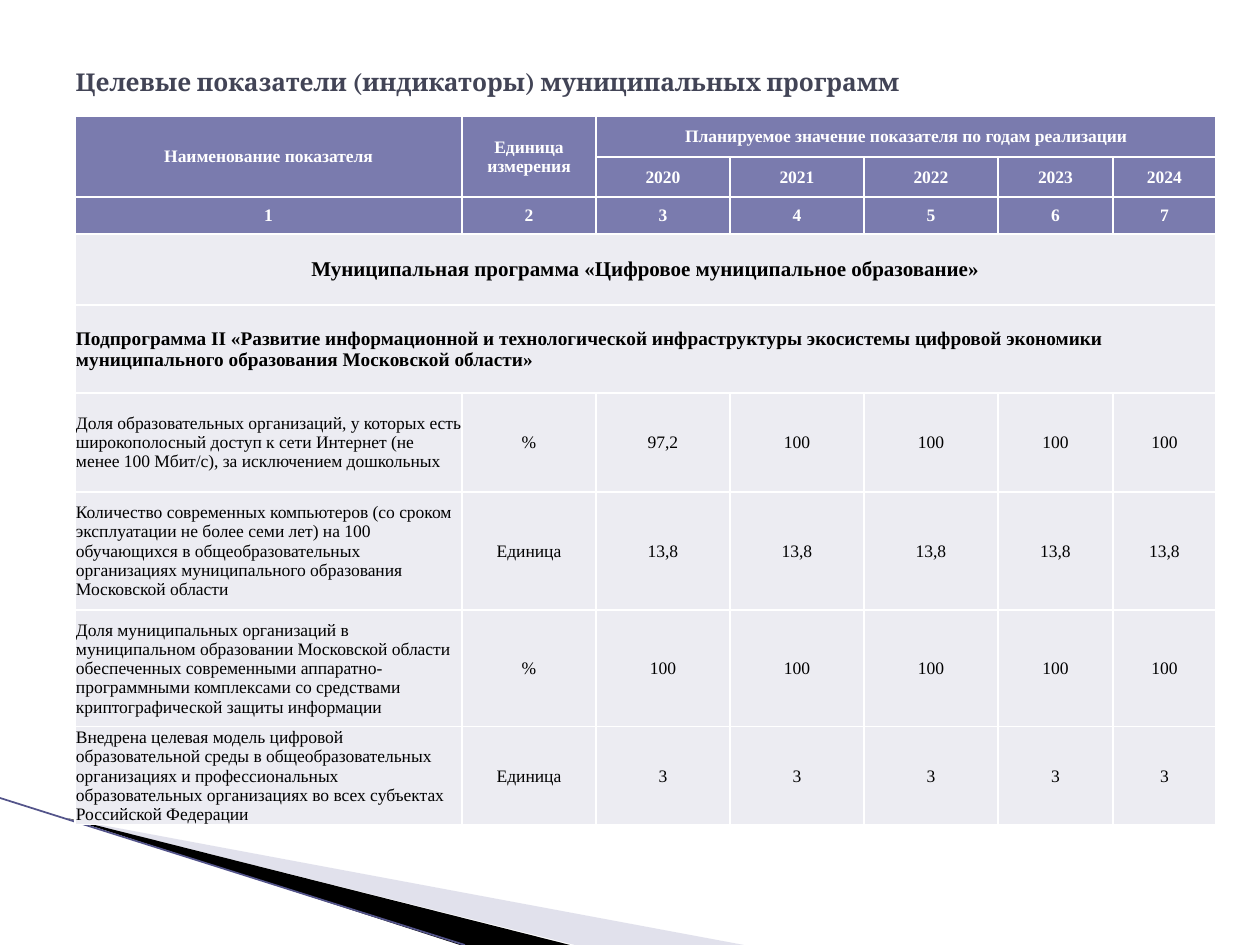
from dataclasses import dataclass
from lxml.etree import SubElement
from pptx import Presentation
from pptx.dml.color import RGBColor
from pptx.enum.shapes import MSO_CONNECTOR
from pptx.enum.text import MSO_ANCHOR, MSO_AUTO_SIZE, PP_ALIGN
from pptx.oxml.ns import qn
from pptx.util import Pt


@dataclass(frozen=True)
class Theme:
    head: str = "7A7BAE"
    body: str = "ECECF2"
    title: str = "424456"
    white: str = "FFFFFF"
    black: str = "000000"
    wedge: str = "B6B6D1"
    line: str = "53548A"
    serif: str = "Times New Roman"
    display: str = "Cambria"
    big: int = 14
    group: int = 12
    sub: int = 11
    text: int = 10


theme = Theme()

TITLE = "Целевые показатели (индикаторы) муниципальных программ"
HEAD = [
    ["Наименование показателя", "Единица измерения",
     "Планируемое значение показателя по годам реализации"],
    ["", "", "2020", "2021", "2022", "2023", "2024"],
    ["1", "2", "3", "4", "5", "6", "7"],
]
GROUPS = [
    ["Муниципальная программа «Цифровое муниципальное образование»"],
    ["Подпрограмма II «Развитие информационной и технологической инфраструктуры "
     "экосистемы цифровой экономики муниципального образования Московской области»"],
]
GOALS = [
    ["Доля образовательных организаций, у которых есть широкополосный доступ к сети "
     "Интернет (не менее 100 Мбит/с), за исключением дошкольных",
     "%", "97,2", "100", "100", "100", "100"],
    ["Количество современных компьютеров (со сроком эксплуатации не более семи лет) "
     "на 100 обучающихся в общеобразовательных организациях муниципального "
     "образования Московской области", "Единица"] + ["13,8"] * 5,
    ["Доля муниципальных организаций в муниципальном образовании Московской области "
     "обеспеченных современными аппаратно-программными комплексами со средствами "
     "криптографической защиты информации", "%"] + ["100"] * 5,
    ["Внедрена целевая модель цифровой образовательной среды в общеобразовательных "
     "организациях и профессиональных образовательных организациях во всех субъектах "
     "Российской Федерации", "Единица"] + ["3"] * 5,
]
ROWS = HEAD + GROUPS + GOALS
WIDTHS = [387, 134, 134, 134, 134, 115, 103]
HEIGHTS = [41, 40, 37, 71, 88, 99, 118, 117, 98]
SPANS = [(0, 0, 1, 0), (0, 1, 1, 1), (0, 2, 0, 6), (3, 0, 3, 6), (4, 0, 4, 6)]
WEDGES = [
    ([(69, 819), (744, 945), (575, 945)], theme.wedge, 40),
    ([(67, 818), (570, 945), (460, 945)], theme.black, 100),
]
SCALE = 914400 / 126


def px(n):
    return round(n * SCALE)


def write(frame, text, size, color, bold, align, face):
    para = frame.paragraphs[0]
    para.alignment = align
    run = para.add_run()
    run.text = text
    font = run.font
    font.name, font.size, font.bold = face, Pt(size), bold
    font.color.rgb = RGBColor.from_string(color)


def add_wedge(slide, points, color, alpha):
    path = slide.shapes.build_freeform(*points[0], scale=SCALE)
    path.add_line_segments(points[1:], close=True)
    shape = path.convert_to_shape()
    shape.shadow.inherit = False
    shape.line.fill.background()
    shape.fill.solid()
    shape.fill.fore_color.rgb = RGBColor.from_string(color)
    if alpha < 100:
        tint = shape.fill._xPr.find(qn("a:solidFill"))[0]
        SubElement(tint, qn("a:alpha"), val=str(alpha * 1000))


def add_edges(cell):
    props = cell._tc.get_or_add_tcPr()
    for side in ("lnL", "lnR", "lnT", "lnB"):
        edge = SubElement(props, qn(f"a:{side}"), w=str(Pt(1)))
        fill = SubElement(edge, qn("a:solidFill"))
        SubElement(fill, qn("a:srgbClr"), val=theme.white)


def style(row, col):
    if row < 3:
        return theme.text, theme.white, True, PP_ALIGN.CENTER
    if row == 3:
        return theme.group, theme.black, True, PP_ALIGN.CENTER
    if row == 4:
        return theme.sub, theme.black, True, PP_ALIGN.LEFT
    align = PP_ALIGN.CENTER if col else PP_ALIGN.LEFT
    return theme.text, theme.black, False, align


def add_grid(slide):
    grid = slide.shapes.add_table(
        len(ROWS), len(WIDTHS), px(75), px(116),
        px(sum(WIDTHS)), px(sum(HEIGHTS))).table
    for col, width in zip(grid.columns, WIDTHS):
        col.width = px(width)
    for row, height in zip(grid.rows, HEIGHTS):
        row.height = px(height)
    for top, left, low, right in SPANS:
        grid.cell(top, left).merge(grid.cell(low, right))
    for r, texts in enumerate(ROWS):
        for c in range(len(WIDTHS)):
            cell = grid.cell(r, c)
            add_edges(cell)
            cell.fill.solid()
            cell.fill.fore_color.rgb = RGBColor.from_string(
                theme.head if r < len(HEAD) else theme.body)
            cell.margin_left = cell.margin_right = cell.margin_top = px(1)
            cell.margin_bottom = 0
            cell.vertical_anchor = MSO_ANCHOR.MIDDLE
            if c < len(texts) and texts[c]:
                write(cell.text_frame, texts[c], *style(r, c), theme.serif)


def main():
    deck = Presentation()
    deck.slide_width, deck.slide_height = px(1260), px(945)
    slide = deck.slides.add_slide(deck.slide_layouts[5])

    for wedge in WEDGES:
        add_wedge(slide, *wedge)
    line = slide.shapes.add_connector(
        MSO_CONNECTOR.STRAIGHT, px(0), px(798), px(465), px(945))
    line.line.width = Pt(1)
    line.line.color.rgb = RGBColor.from_string(theme.line)
    SubElement(line._element.spPr, qn("a:effectLst"))

    title = slide.shapes.title
    title.left, title.top = px(63), px(38)
    title.width, title.height = px(1134), px(87)
    frame = title.text_frame
    frame.word_wrap = True
    frame.auto_size = MSO_AUTO_SIZE.NONE
    frame.vertical_anchor = MSO_ANCHOR.MIDDLE
    write(frame, TITLE, theme.big, theme.title, True, PP_ALIGN.LEFT, theme.display)

    add_grid(slide)
    deck.save("out.pptx")


if __name__ == "__main__":
    main()
